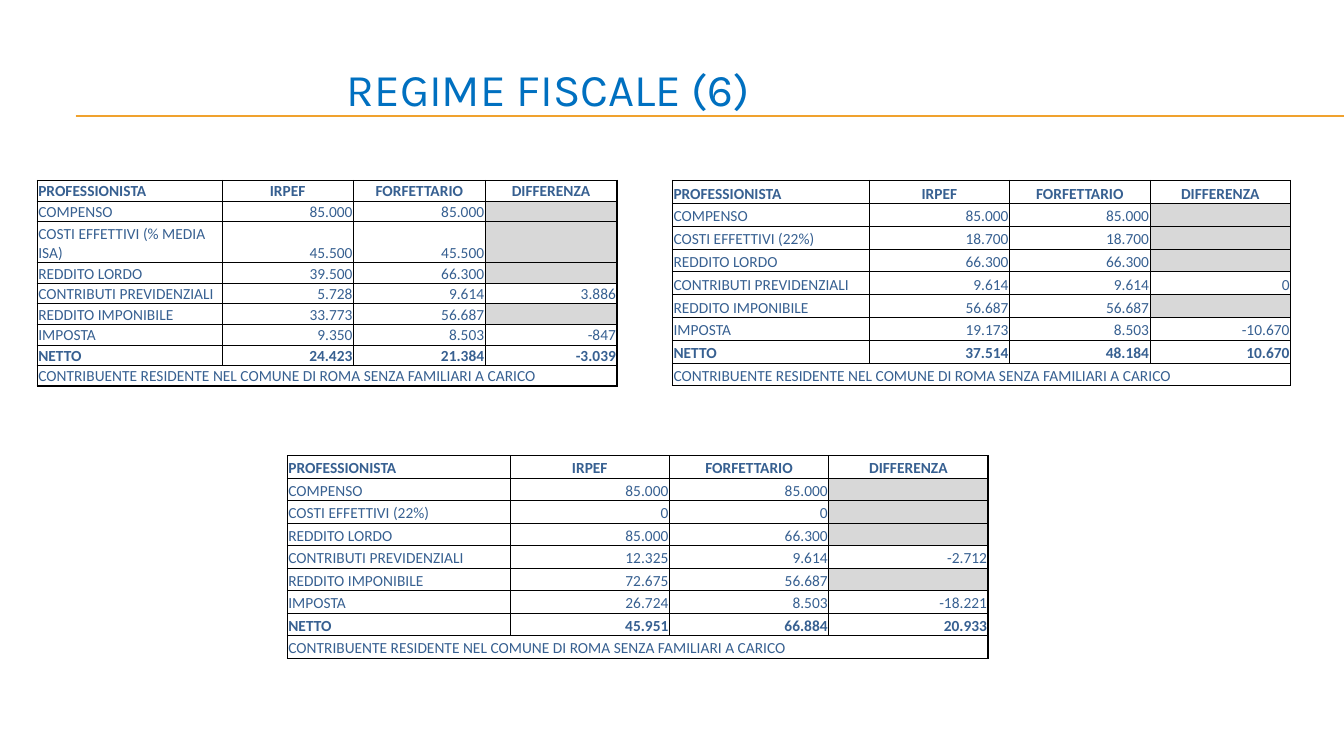
"""Builds the slide comparing IRPEF and flat-rate taxation in three tables."""
from lxml.etree import SubElement
from pptx import Presentation
from pptx.dml.color import RGBColor
from pptx.enum.shapes import MSO_CONNECTOR
from pptx.enum.text import MSO_ANCHOR, PP_ALIGN
from pptx.oxml.ns import qn
from pptx.util import Inches, Pt

TITLE = "REGIME FISCALE (6)"
HEADER = ("PROFESSIONISTA", "IRPEF", "FORFETTARIO", "DIFFERENZA")
FOOTER = ("CONTRIBUENTE RESIDENTE NEL COMUNE DI ROMA SENZA FAMILIARI A CARICO", "", "", "")
LABELS = ("COMPENSO", "COSTI EFFETTIVI", "REDDITO LORDO", "CONTRIBUTI PREVIDENZIALI",
          "REDDITO IMPONIBILE", "IMPOSTA", "NETTO")
TABLES = [
    {"box": (0.37, 1.79, 5.75, 2.04), "first": 1.83, "costs": " (% MEDIA ISA)", "cost_lines": 2,
     "irpef": ("85.000", "45.500", "39.500", "5.728", "33.773", "9.350", "24.423"),
     "flat": ("85.000", "45.500", "66.300", "9.614", "56.687", "8.503", "21.384"),
     "difference": ("", "", "", "3.886", "", "-847", "-3.039")},
    {"box": (6.67, 1.79, 6.13, 2.04), "first": 1.95, "costs": " (22%)", "cost_lines": 1,
     "irpef": ("85.000", "18.700", "66.300", "9.614", "56.687", "19.173", "37.514"),
     "flat": ("85.000", "18.700", "66.300", "9.614", "56.687", "8.503", "48.184"),
     "difference": ("", "", "", "0", "", "-10.670", "10.670")},
    {"box": (2.85, 4.52, 6.95, 2.01), "first": 2.21, "costs": " (22%)", "cost_lines": 1,
     "irpef": ("85.000", "0", "85.000", "12.325", "72.675", "26.724", "45.951"),
     "flat": ("85.000", "0", "66.300", "9.614", "56.687", "8.503", "66.884"),
     "difference": ("", "", "", "-2.712", "", "-18.221", "20.933")},
]
TITLE_BLUE, TEXT_BLUE, GOLD, GREY, BLACK = "0070C0", "376091", "F0A22E", "D8D8D8", "000000"
COST_ROW, NET_ROW, FOOTER_ROW, LAST_COLUMN = 2, 7, 8, 3


def color(value):
    return RGBColor.from_string(value)


def write(paragraph, text, font, size, shade, align, bold=False):
    paragraph.alignment = align
    run = paragraph.add_run()
    run.text = text
    run.font.name, run.font.size, run.font.bold = font, Pt(size), bold
    run.font.color.rgb = color(shade)


def add_title(slide):
    box = slide.shapes.add_textbox(Inches(0.74), Inches(0.5), Inches(9.4), Inches(0.76))
    box.text_frame.word_wrap = True
    box.text_frame.vertical_anchor = MSO_ANCHOR.MIDDLE
    write(box.text_frame.paragraphs[0], TITLE, "Karla", 32.4, TITLE_BLUE, PP_ALIGN.CENTER)


def add_rule(slide, y):
    line = slide.shapes.add_connector(MSO_CONNECTOR.STRAIGHT, Inches(0.75), Inches(y),
                                      Inches(13.33), Inches(y))
    line.line.color.rgb = color(GOLD)
    line.line.width = Pt(0.75)
    SubElement(line._element.spPr, qn("a:effectLst"))


def set_borders(cell, row, column):
    outer = {"L": column == 0, "R": column == LAST_COLUMN or row == FOOTER_ROW,
             "T": row == 0, "B": row == FOOTER_ROW}
    properties = cell._tc.get_or_add_tcPr()
    for side, is_outer in outer.items():
        border = SubElement(properties, qn(f"a:ln{side}"), w=str(Pt(1 if is_outer else 0.5)))
        fill = SubElement(border, qn("a:solidFill"))
        SubElement(fill, qn("a:srgbClr"), val=BLACK)


def fill_cell(cell, text, row, column):
    cell.margin_left = cell.margin_right = cell.margin_top = Inches(0.01)
    cell.margin_bottom = 0
    cell.vertical_anchor = MSO_ANCHOR.BOTTOM
    set_borders(cell, row, column)
    cell.fill.background()
    paragraph = cell.text_frame.paragraphs[0]
    if text:
        align = (PP_ALIGN.LEFT if column == 0 else
                 PP_ALIGN.CENTER if row == 0 else PP_ALIGN.RIGHT)
        write(paragraph, text, "Calibri", 11, TEXT_BLUE, align, row in (0, NET_ROW))
    else:
        SubElement(paragraph._p, qn("a:endParaRPr"), sz="1100")
        if row != FOOTER_ROW:
            cell.fill.solid()
            cell.fill.fore_color.rgb = color(GREY)


def add_tax_table(slide, data):
    left, top, width, height = data["box"]
    labels = [label + data["costs"] if index + 1 == COST_ROW else label
              for index, label in enumerate(LABELS)]
    body = zip(labels, data["irpef"], data["flat"], data["difference"])
    rows = [HEADER, *body, FOOTER]
    frame = slide.shapes.add_table(len(rows), len(HEADER), Inches(left), Inches(top),
                                   Inches(width), Inches(height))
    table = frame.table
    table.first_row = table.horz_banding = False
    for index, column in enumerate(table.columns):
        column.width = Inches(data["first"] if index == 0 else (width - data["first"]) / 3)
    line_height = height / (len(rows) - 1 + data["cost_lines"])
    for row, texts in enumerate(rows):
        lines = data["cost_lines"] if row == COST_ROW else 1
        table.rows[row].height = Inches(line_height * lines)
        for column, text in enumerate(texts):
            fill_cell(table.cell(row, column), text, row, column)
    table.cell(FOOTER_ROW, 0).merge(table.cell(FOOTER_ROW, LAST_COLUMN))


def main():
    presentation = Presentation()
    presentation.slide_width, presentation.slide_height = Inches(13.33), Inches(7.5)
    slide = presentation.slides.add_slide(presentation.slide_layouts[6])
    for y in (1.15, 1.16):
        add_rule(slide, y)
    add_title(slide)
    for data in TABLES:
        add_tax_table(slide, data)
    presentation.save("out.pptx")


if __name__ == "__main__":
    main()
